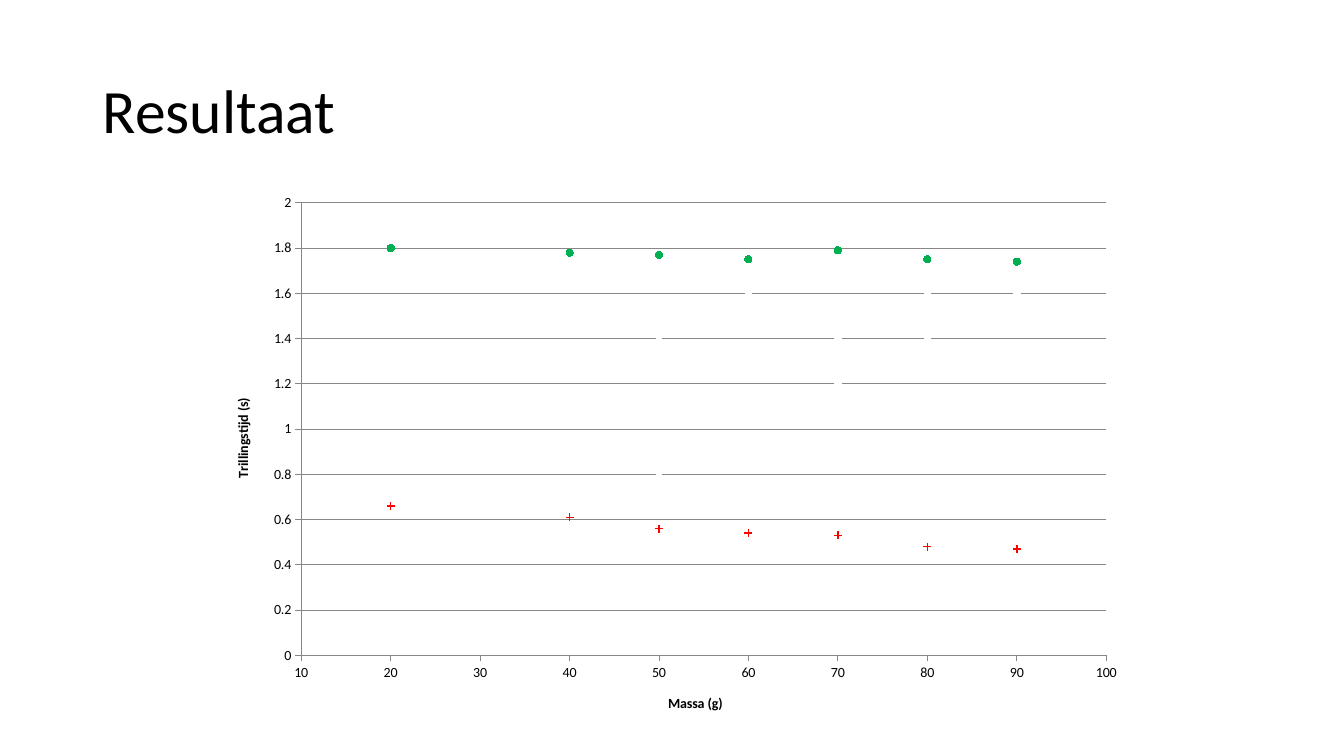
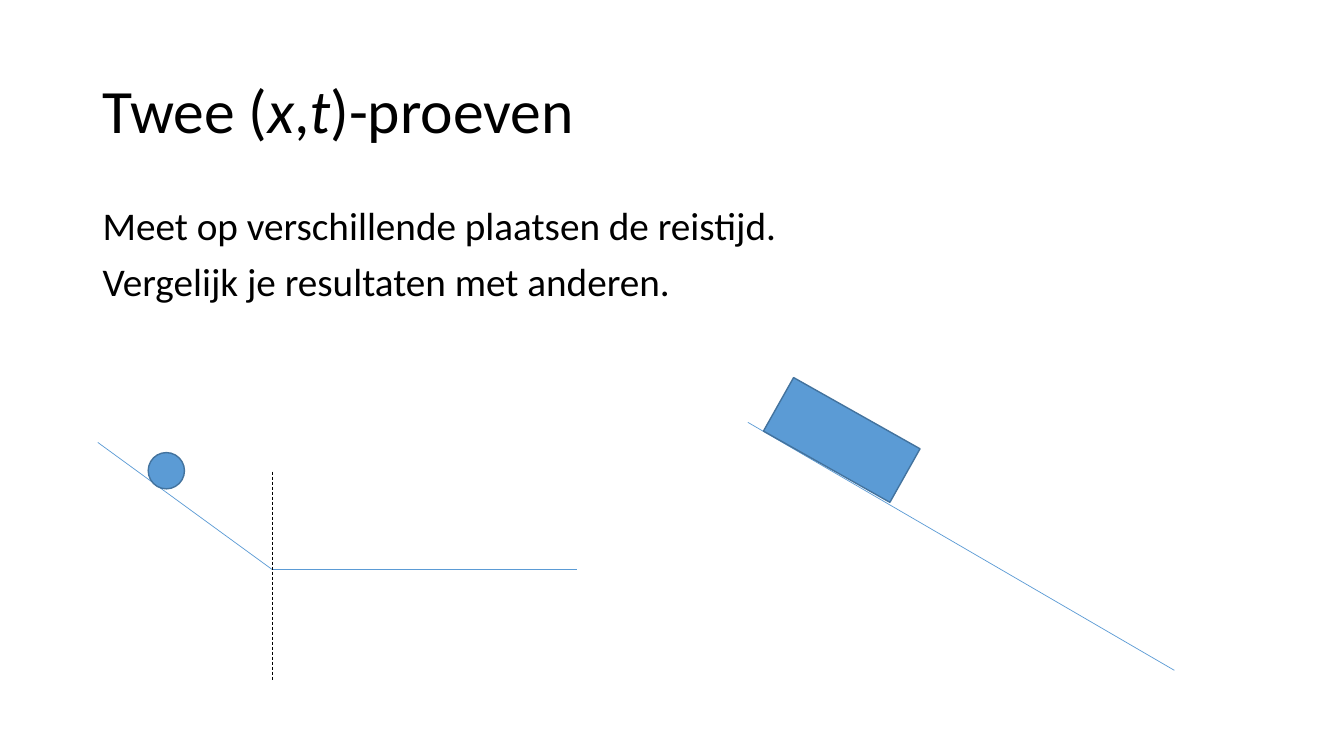
"""Build two slides on physics experiments: a scatter chart and two ramp sketches."""
from lxml import etree
from pptx import Presentation
from pptx import util as u
from pptx.chart import data as chart_data
from pptx.dml import color
from pptx.enum import chart as charts, dml, shapes, text
from pptx.oxml import ns

WIDTH, HEIGHT = u.Inches(13.333), u.Inches(7.5)
FONT = "Calibri"
COLORS = {"ink": "000000", "paper": "FFFFFF", "blue": "5B9BD5", "edge": "43739E",
          "axis": "878787", "green": "00B050", "red": "FF0000"}
MARGIN, CONTENT_WIDTH = 6.9, 86.25
PLOT_AREA = {"x": 0.1, "y": 0.03, "w": 0.87, "h": 0.83}
MASSES = [20, 40, 50, 60, 70, 80, 90]
PERIODS = [
    [1.44, 1.36, 1.39, 1.35, 1.4, 1.39, 1.42],
    [0.96, 0.96, 0.97, 0.95, 0.93, 0.93, 0.95],
    [1.33, 1.34, 1.33, 1.34, 1.33, 1.36, 1.35],
    [1.07, 1.06, 1.05, 1.03, 1.04, 1.06, 1.05],
    [1.56, 1.58, 1.55, 1.59, 1.63, 1.61, 1.6],
    [0.82, 0.72, 0.81, 0.76, 0.72, 0.71, 0.75],
    [1.1, 1.11, 1.08, 1.13, 1.21, 1.11, 1.16],
    [1.8, 1.78, 1.77, 1.75, 1.79, 1.75, 1.74],
    [0.66, 0.61, 0.56, 0.54, 0.53, 0.48, 0.47],
]
HIGHLIGHTS = {7: ("green", charts.XL_MARKER_STYLE.CIRCLE),
              8: ("red", charts.XL_MARKER_STYLE.PLUS)}
PLAIN_MARKER = ("paper", charts.XL_MARKER_STYLE.CIRCLE)


def rgb(name):
    """Return the named colour."""
    return color.RGBColor.from_string(COLORS[name])


def across(share):
    """Turn a percentage of the slide width into a length."""
    return round(WIDTH * share / 100)


def down(share):
    """Turn a percentage of the slide height into a length."""
    return round(HEIGHT * share / 100)


def area(left, top, width, height):
    """Turn percentages of the slide into a position and size."""
    return across(left), down(top), across(width), down(height)


def style_font(font, size, bold=False, italic=False):
    """Apply the shared typeface and ink colour."""
    font.name, font.size, font.bold, font.italic = FONT, u.Pt(size), bold, italic
    font.color.rgb = rgb("ink")


def add_text(page, place, paragraphs, size, before=0, anchor=text.MSO_ANCHOR.TOP):
    """Add paragraphs, each a list of (words, italic) spans."""
    box = page.shapes.add_textbox(*area(*place))
    frame = box.text_frame
    frame.word_wrap, frame.vertical_anchor = True, anchor
    for index, spans in enumerate(paragraphs):
        para = frame.add_paragraph() if index else frame.paragraphs[0]
        para.line_spacing, para.space_before = 0.9, u.Pt(before)
        for words, italic in spans:
            span = para.add_run()
            span.text = words
            style_font(span.font, size, italic=italic)


def add_page(deck, *title_spans):
    """Add a blank page with the shared title style."""
    page = deck.slides.add_slide(deck.slide_layouts[6])
    add_text(page, (MARGIN, 5.33, CONTENT_WIDTH, 19.33), [title_spans], 44,
             anchor=text.MSO_ANCHOR.MIDDLE)
    return page


def add_line(page, start, end, line_color="blue", dash=None):
    """Add a thin straight line between two points."""
    line = page.shapes.add_connector(shapes.MSO_CONNECTOR.STRAIGHT, across(start[0]),
                                     down(start[1]), across(end[0]), down(end[1]))
    line.line.color.rgb, line.line.width = rgb(line_color), u.Pt(0.5)
    if dash:
        line.line.dash_style = dash
    etree.SubElement(line.element.spPr, ns.qn("a:effectLst"))


def add_body(page, kind, place, rotation=0):
    """Add a blue moving object."""
    body = page.shapes.add_shape(kind, *area(*place))
    body.rotation, body.shadow.inherit = rotation, False
    body.fill.solid()
    body.fill.fore_color.rgb = rgb("blue")
    body.line.color.rgb, body.line.width = rgb("edge"), u.Pt(1)


def format_axis(axis, title, low, high, step, grid=False):
    """Set the scale, title and lines of an axis."""
    axis.minimum_scale, axis.maximum_scale, axis.major_unit = low, high, step
    axis.major_tick_mark = charts.XL_TICK_MARK.OUTSIDE
    axis.tick_labels.number_format = "General"
    axis.tick_labels.number_format_is_linked = False
    axis.format.line.color.rgb = rgb("axis")
    axis.has_major_gridlines = grid
    if grid:
        axis.major_gridlines.format.line.color.rgb = rgb("axis")
    para = axis.axis_title.text_frame.paragraphs[0]
    span = para.add_run()
    span.text = title
    style_font(span.font, 10, bold=True)


def set_plot_area(chart):
    """Fix the inner plot area as shares of the chart."""
    plot_area = chart.plots[0]._element.getparent()
    for old in plot_area.findall(ns.qn("c:layout")):
        plot_area.remove(old)
    layout = etree.Element(ns.qn("c:layout"))
    manual = etree.SubElement(layout, ns.qn("c:manualLayout"))
    settings = {"layoutTarget": "inner", "xMode": "edge", "yMode": "edge", **PLOT_AREA}
    for tag, value in settings.items():
        etree.SubElement(manual, ns.qn(f"c:{tag}")).set("val", str(value))
    plot_area.insert(0, layout)


def add_scatter(page, place):
    """Add the chart of period against mass."""
    data = chart_data.XyChartData()
    for number, periods in enumerate(PERIODS, 1):
        series = data.add_series(f"Series {number}")
        for mass, period in zip(MASSES, periods):
            series.add_data_point(mass, period)
    chart = page.shapes.add_chart(charts.XL_CHART_TYPE.XY_SCATTER, *area(*place), data).chart
    chart.has_legend = chart.has_title = False
    style_font(chart.font, 10)
    chart.plots[0].vary_by_categories = False
    format_axis(chart.category_axis, "Massa (g)", 10, 100, 10)
    format_axis(chart.value_axis, "Trillingstijd (s)", 0, 2, 0.2, grid=True)
    for index, series in enumerate(chart.plots[0].series):
        name, style = HIGHLIGHTS.get(index, PLAIN_MARKER)
        series.smooth = False
        series.format.line.fill.background()
        marker = series.marker
        marker.style, marker.size = style, 5
        marker.format.fill.solid()
        marker.format.fill.fore_color.rgb = rgb(name)
        marker.format.line.color.rgb = rgb(name)
    set_plot_area(chart)


def add_ball_ramp(page):
    """Draw a ball on a slope that runs on to level ground."""
    foot = (20.25, 75.33)
    add_line(page, (7.28, 58.53), foot)
    add_line(page, foot, (42.9, foot[1]))
    add_body(page, shapes.MSO_SHAPE.OVAL, (11.03, 59.87, 2.7, 4.8))
    add_line(page, (foot[0], 62.4), (foot[0], 90.13), "ink", dml.MSO_LINE.DASH)


def add_block_ramp(page):
    """Draw a block on a long slope."""
    add_line(page, (87.38, 88.67), (55.65, 55.87))
    add_body(page, shapes.MSO_SHAPE.RECTANGLE, (57.23, 54.13, 10.8, 8.13), 29.4)


def main():
    """Build and save the deck."""
    deck = Presentation()
    deck.slide_width, deck.slide_height = WIDTH, HEIGHT

    page = add_page(deck, ("Resultaat", False))
    add_scatter(page, (15.53, 24.67, 68.85, 72.13))

    page = add_page(deck, ("Twee (", False), ("x", True), (",", False), ("t", True),
                    (")-proeven", False))
    add_text(page, (MARGIN, 26.67, CONTENT_WIDTH, 63.47),
             [[("Meet op verschillende plaatsen de reistijd.", False)],
              [("Vergelijk je resultaten met anderen.", False)]], 28, before=10)
    add_ball_ramp(page)
    add_block_ramp(page)

    deck.save("out.pptx")


if __name__ == "__main__":
    main()
